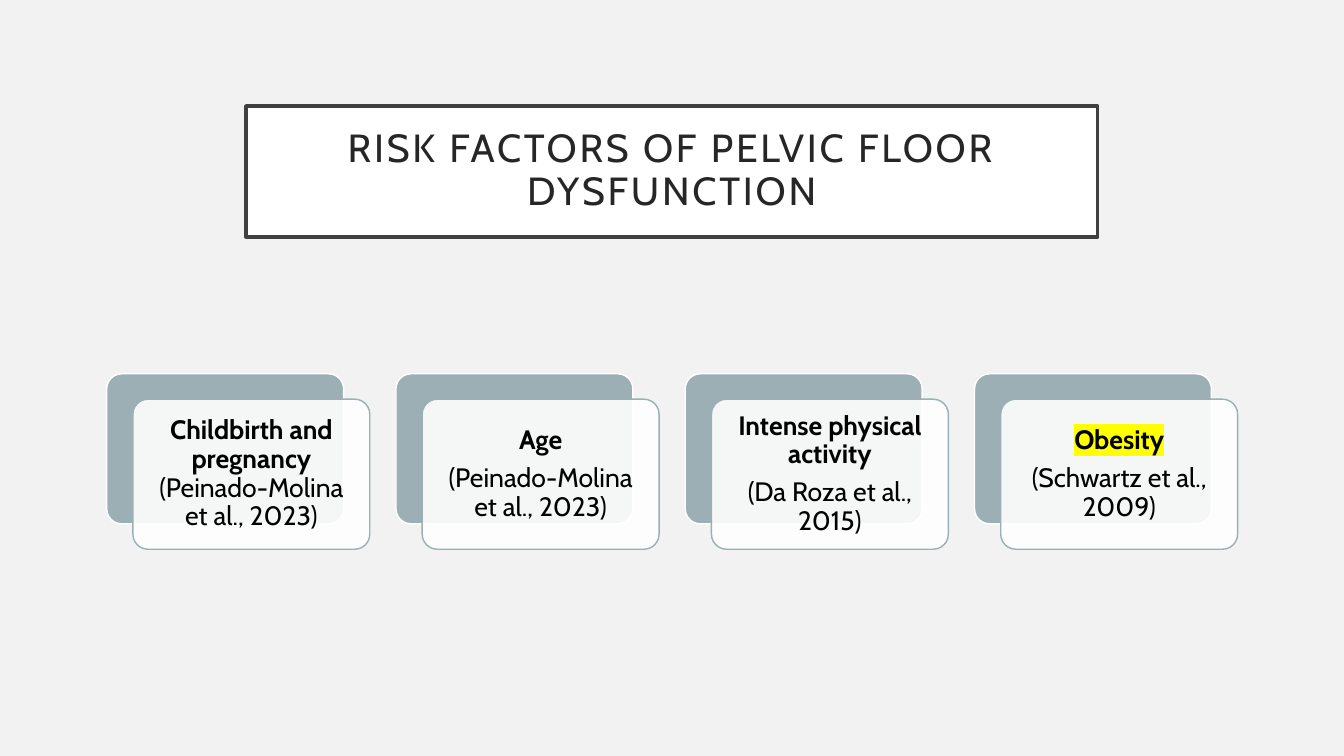
"""Build a slide of four pelvic floor risk factors shown as layered cards."""
from lxml.etree import SubElement
from pptx import Presentation
from pptx.dml.color import RGBColor
from pptx.enum.shapes import MSO_SHAPE
from pptx.enum.text import MSO_ANCHOR, PP_ALIGN
from pptx.oxml.ns import qn
from pptx.util import Cm, Pt

COLORS = {
    "background": "F2F2F2",
    "white": "FFFFFF",
    "frame": "404040",
    "title": "262626",
    "card": "9BAFB5",
    "text": "000000",
    "highlight": "FFFF00",
}
FONT = "Cabin"
CARD_LEFT, CARD_TOP, CARD_PITCH = 2.69, 9.42, 7.29
CARD_WIDTH, CARD_HEIGHT = 5.97, 3.78
SHIFT_X, SHIFT_Y, TEXT_INSET = 0.66, 0.64, 0.11
RISK_FACTORS = [
    [[("Childbirth and pregnancy ", True, False),
      ("(Peinado-Molina et al., 2023)", False, False)]],
    [[("Age", True, False)], [("(Peinado-Molina et al., 2023)", False, False)]],
    [[("Intense physical activity", True, False)],
     [("(Da Roza et al., 2015)", False, False)]],
    [[("Obesity", True, True)], [("(Schwartz et al., 2009)", False, False)]],
]


def rgb(name):
    return RGBColor.from_string(COLORS[name])


def add_panel(slide, kind, left, top, width, height, fill, line, weight):
    sp = slide.shapes.add_shape(kind, Cm(left), Cm(top), Cm(width), Cm(height))
    sp.shadow.inherit = False
    sp.fill.solid()
    sp.fill.fore_color.rgb = rgb(fill)
    sp.line.color.rgb = rgb(line)
    sp.line.width = Pt(weight)
    return sp


def set_frame(sp, margin):
    tf = sp.text_frame
    tf.word_wrap = True
    tf.vertical_anchor = MSO_ANCHOR.MIDDLE
    tf.margin_left = tf.margin_right = Cm(margin)
    tf.margin_top = tf.margin_bottom = Cm(margin)
    return tf


def style_paragraph(p, size, color):
    p.alignment = PP_ALIGN.CENTER
    p.line_spacing = 0.9
    p.font.name = FONT
    p.font.size = Pt(size)
    p.font.color.rgb = rgb(color)


def add_title(slide, text):
    sp = add_panel(slide, MSO_SHAPE.RECTANGLE, 6.2, 2.67, 21.46, 3.3,
                   "white", "frame", 2.5)
    p = set_frame(sp, 0.51).paragraphs[0]
    style_paragraph(p, 28, "title")
    r = p.add_run()
    r.text = text
    r._r.get_or_add_rPr().set("spc", "200")


def add_card_layer(slide, left, top, fill, line):
    sp = add_panel(slide, MSO_SHAPE.ROUNDED_RECTANGLE, left, top,
                   CARD_WIDTH, CARD_HEIGHT, fill, line, 1)
    sp.adjustments[0] = 0.1
    return sp


def set_opacity(sp, percent):
    color = sp._element.spPr.find(qn("a:solidFill"))[0]
    SubElement(color, qn("a:alpha")).set("val", str(percent * 1000))


def highlight_run(r):
    mark = SubElement(r._r.get_or_add_rPr(), qn("a:highlight"))
    SubElement(mark, qn("a:srgbClr")).set("val", COLORS["highlight"])


def add_card_text(slide, left, top, paragraphs):
    box = slide.shapes.add_textbox(
        Cm(left + TEXT_INSET), Cm(top + TEXT_INSET),
        Cm(CARD_WIDTH - 2 * TEXT_INSET), Cm(CARD_HEIGHT - 2 * TEXT_INSET))
    tf = set_frame(box, 0.2)
    for i, runs in enumerate(paragraphs):
        p = tf.add_paragraph() if i else tf.paragraphs[0]
        style_paragraph(p, 19, "text")
        p.space_after = Pt(6.65)
        for text, bold, highlighted in runs:
            r = p.add_run()
            r.text = text
            r.font.bold = bold
            if highlighted:
                highlight_run(r)


def add_card(slide, left, paragraphs):
    add_card_layer(slide, left, CARD_TOP, "card", "white")
    front_left, front_top = left + SHIFT_X, CARD_TOP + SHIFT_Y
    front = add_card_layer(slide, front_left, front_top, "white", "card")
    set_opacity(front, 90)
    add_card_text(slide, front_left, front_top, paragraphs)


def main():
    prs = Presentation()
    prs.slide_width, prs.slide_height = Cm(33.87), Cm(19.05)
    slide = prs.slides.add_slide(prs.slide_layouts[6])
    slide.background.fill.solid()
    slide.background.fill.fore_color.rgb = rgb("background")
    add_title(slide, "RISK FACTORS OF PELVIC FLOOR DYSFUNCTION")
    for i, paragraphs in enumerate(RISK_FACTORS):
        add_card(slide, CARD_LEFT + i * CARD_PITCH, paragraphs)
    prs.save("out.pptx")


if __name__ == "__main__":
    main()
